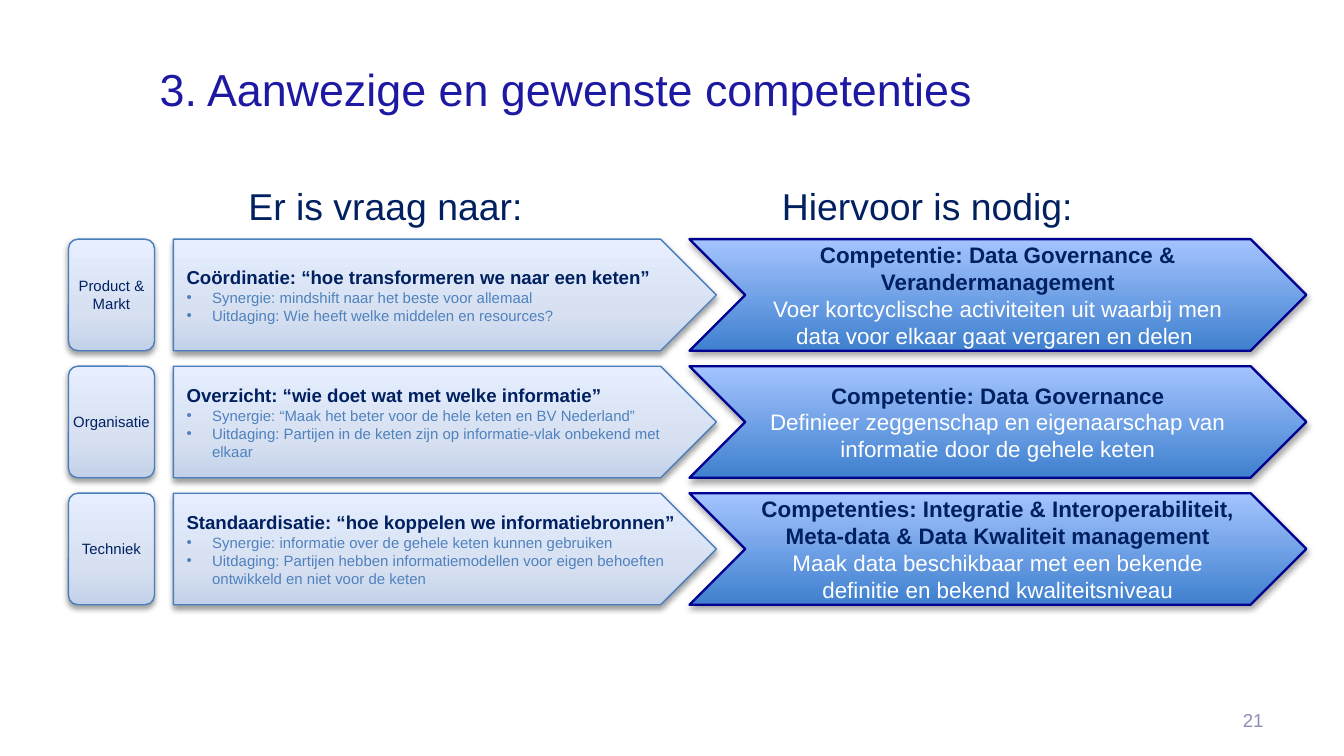
"""Build a slide that pairs demands on the data chain with the competencies they need."""
from pptx import Presentation
from pptx.dml.color import RGBColor
from pptx.enum.shapes import MSO_SHAPE
from pptx.enum.text import MSO_ANCHOR, PP_ALIGN
from pptx.oxml import parse_xml
from pptx.oxml.ns import nsdecls, qn
from pptx.util import Inches, Pt

COLORS = {
    "title": "1D19A2", "navy": "002060", "bullet": "4F81BD", "white": "FFFFFF",
    "number": "8C8CB4", "pale_line": "4B7EBC", "deep_line": "000090", "shadow": "000000",
    "pale_low": "C2D1E9", "pale_middle": "D6E0F1", "pale_high": "E6EEFF",
    "deep_low": "3F80CE", "deep_high": "A4C4FF",
}
PALE = {"stops": [(0, "pale_low"), (33, "pale_middle"), (100, "pale_high")],
        "line": "pale_line", "weight": 0.75, "opacity": 38, "distance": 1.6}
DEEP = {"stops": [(0, "deep_low"), (100, "deep_high")],
        "line": "deep_line", "weight": 1.25, "opacity": 35, "distance": 1.8}
COLUMNS = [
    (MSO_SHAPE.ROUNDED_RECTANGLE, 0.51, 0.64, PALE),
    (MSO_SHAPE.PENTAGON, 1.29, 4.04, PALE),
    (MSO_SHAPE.CHEVRON, 5.13, 4.59, DEEP),
]
FIRST_TOP, LAST_TOP, ROW_HEIGHT = 1.78, 3.67, 0.83
ROWS = [
    ("Product & Markt",
     "Coördinatie: “hoe transformeren we naar een keten”",
     ["Synergie: mindshift naar het beste voor allemaal",
      "Uitdaging: Wie heeft welke middelen en resources?"],
     "Competentie: Data Governance & Verandermanagement",
     "Voer kortcyclische activiteiten uit waarbij men data voor elkaar gaat vergaren en delen "),
    ("Organisatie",
     "Overzicht: “wie doet wat met welke informatie”",
     ["Synergie: “Maak het beter voor de hele keten en BV Nederland”",
      "Uitdaging: Partijen in de keten zijn op informatie-vlak onbekend met elkaar"],
     "Competentie: Data Governance",
     "Definieer zeggenschap en eigenaarschap van informatie door de gehele keten"),
    ("Techniek",
     "Standaardisatie: “hoe koppelen we informatiebronnen”",
     ["Synergie: informatie over de gehele keten kunnen gebruiken",
      "Uitdaging: Partijen hebben informatiemodellen voor eigen behoeften ontwikkeld "
      "en niet voor de keten"],
     "Competenties: Integratie & Interoperabiliteit, Meta-data & Data Kwaliteit management",
     "Maak data beschikbaar met een bekende definitie en bekend kwaliteitsniveau"),
]
HEADINGS = [
    ("3. Aanwezige en gewenste competenties", (1.09, 0.23, 8.41, 0.68), 24, "title",
     PP_ALIGN.LEFT, MSO_ANCHOR.BOTTOM),
    ("\tEr is vraag naar:", (1.36, 1.31, 2.86, 0.69), 20, "navy", PP_ALIGN.LEFT, MSO_ANCHOR.TOP),
    ("\tHiervoor is nodig:", (5.33, 1.31, 3.7, 0.69), 20, "navy", PP_ALIGN.LEFT, MSO_ANCHOR.TOP),
    ("21", (7.17, 5.21, 2.33, 0.3), 10, "number", PP_ALIGN.RIGHT, MSO_ANCHOR.MIDDLE),
]


def write(shape, paragraphs, alignment, anchor=MSO_ANCHOR.MIDDLE):
    frame = shape.text_frame
    frame.word_wrap = True
    frame.vertical_anchor = anchor
    frame.text = "\n".join(text for text, *_ in paragraphs)
    for paragraph, (text, size, color, bold, bulleted) in zip(frame.paragraphs, paragraphs):
        paragraph.alignment = alignment
        properties = paragraph._p.get_or_add_pPr()
        if bulleted:
            properties.set("marL", str(Inches(0.19)))
            properties.set("indent", str(-Inches(0.19)))
            properties.append(parse_xml(f'<a:buFont {nsdecls("a")} typeface="Arial"/>'))
            properties.append(parse_xml(f'<a:buChar {nsdecls("a")} char="•"/>'))
        if text.startswith("\t"):
            properties.append(parse_xml(
                f'<a:tabLst {nsdecls("a")}><a:tab pos="{Inches(0.39)}" algn="l"/></a:tabLst>'))
        for run in paragraph.runs:
            run.font.name = "Arial"
            run.font.size = Pt(size)
            run.font.bold = bold
            run.font.color.rgb = RGBColor.from_string(COLORS[color])


def decorate(shape, style):
    shape.fill.gradient()
    shape.fill.gradient_angle = 90
    stops = shape._element.spPr.find(qn("a:gradFill")).find(qn("a:gsLst"))
    for stop in list(stops):
        stops.remove(stop)
    for position, color in style["stops"]:
        stops.append(parse_xml(f'<a:gs {nsdecls("a")} pos="{position * 1000}">'
                               f'<a:srgbClr val="{COLORS[color]}"/></a:gs>'))
    shape.line.color.rgb = RGBColor.from_string(COLORS[style["line"]])
    shape.line.width = Pt(style["weight"])
    shape.shadow.inherit = False
    shape._element.spPr.find(qn("a:effectLst")).append(parse_xml(
        f'<a:outerShdw {nsdecls("a")} blurRad="{Pt(3.1)}" dist="{Pt(style["distance"])}" '
        f'dir="5400000" rotWithShape="0"><a:srgbClr val="{COLORS["shadow"]}">'
        f'<a:alpha val="{style["opacity"] * 1000}"/></a:srgbClr></a:outerShdw>'))


presentation = Presentation()
presentation.slide_width, presentation.slide_height = Inches(10), Inches(10 * 9 / 16)
slide = presentation.slides.add_slide(presentation.slide_layouts[6])

for text, box, size, color, alignment, anchor in HEADINGS:
    heading = slide.shapes.add_textbox(*map(Inches, box))
    write(heading, [(text, size, color, False, False)], alignment, anchor)

row_pitch = (LAST_TOP - FIRST_TOP) / (len(ROWS) - 1)
for index, (layer, demand, bullets, competency, action) in enumerate(ROWS):
    top = FIRST_TOP + index * row_pitch
    cells = []
    for kind, left, width, style in COLUMNS:
        cell = slide.shapes.add_shape(
            kind, Inches(left), Inches(top), Inches(width), Inches(ROW_HEIGHT))
        decorate(cell, style)
        cells.append(cell)
    label, plate, chevron = cells

    label.adjustments[0] = 0.11
    frame = label.text_frame
    frame.margin_left = frame.margin_right = frame.margin_top = frame.margin_bottom = 0
    write(label, [(layer, 8, "navy", False, False)], PP_ALIGN.CENTER)
    write(plate, [(demand, 10, "navy", True, False)]
          + [(bullet, 8, "bullet", False, True) for bullet in bullets], PP_ALIGN.LEFT)
    write(chevron, [(competency, 12, "navy", True, False),
                    (action, 12, "white", False, False)], PP_ALIGN.CENTER)

presentation.save("out.pptx")
